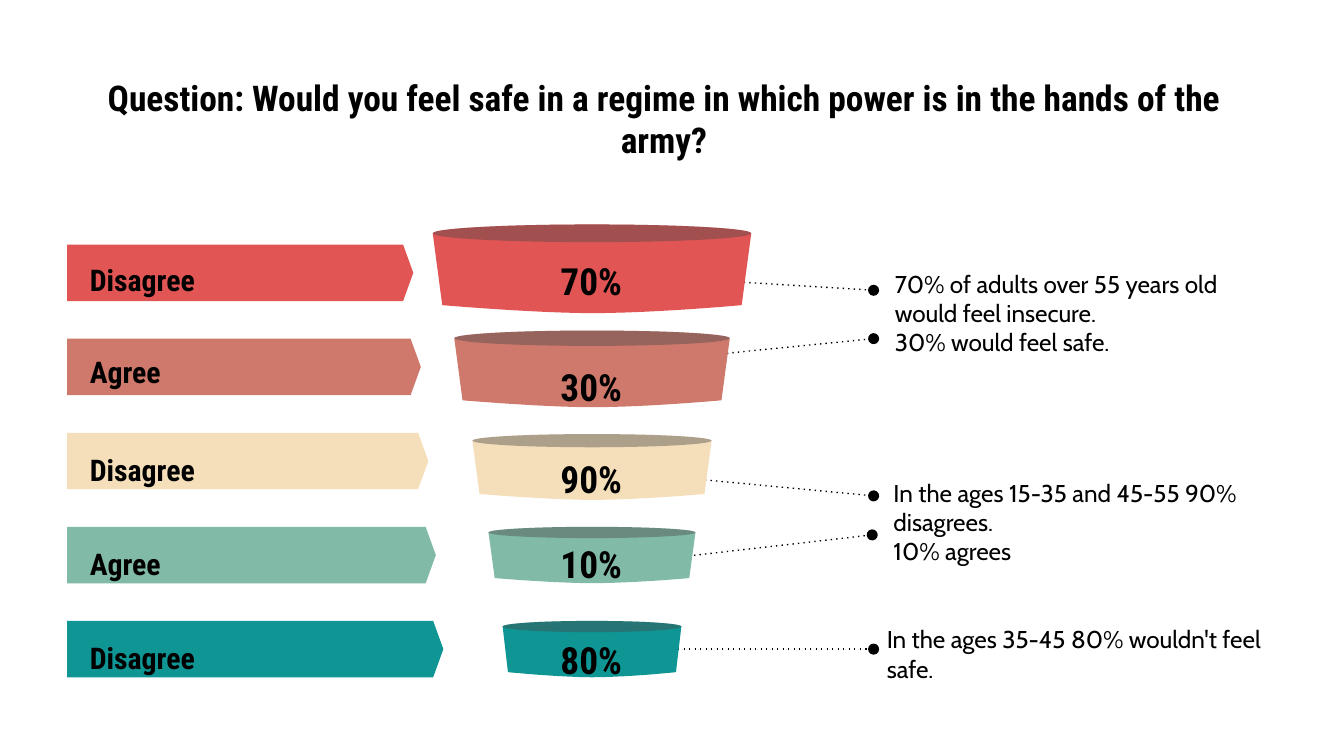
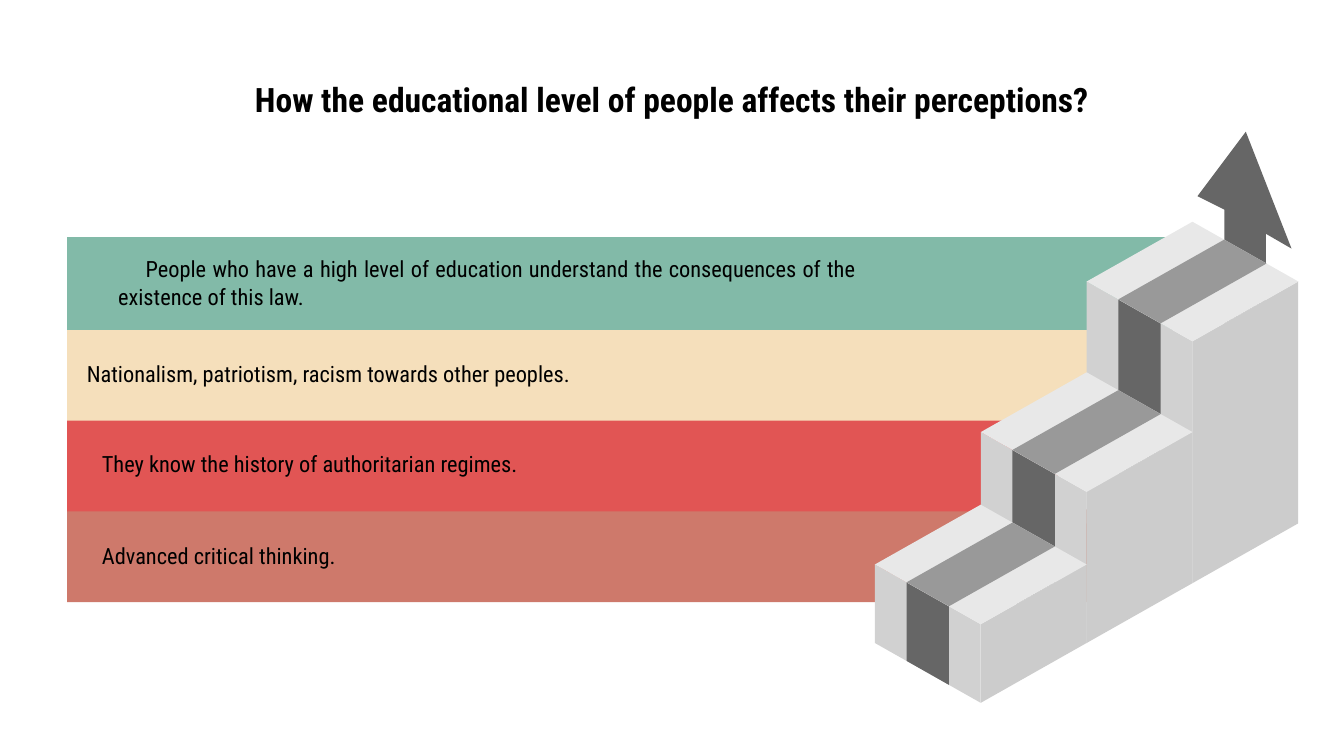
from lxml import etree
from pptx import Presentation
from pptx.dml.color import RGBColor
from pptx.enum import shapes, text
from pptx.oxml.ns import qn
from pptx.util import Emu, Inches, Pt

# Shared grid: a slide is 100 cells wide, and cells are square
WIDE = Inches(10)
CELL = WIDE / 100
HEAD, BODY = "Roboto Condensed", "Cabin"
RED, CLAY, SAND, SAGE, TEAL = "E15554", "CE796B", "F5DFBB", "82BAA8", "0E9594"
BLACK, SHADE = "000000", "494949"
STEEL, GREY, FRONT, SIDE, TOP = "666666", "999999", "D1D1D1", "CCCCCC", "E8E8E8"
LEFT, MID, JUST = text.PP_ALIGN.LEFT, text.PP_ALIGN.CENTER, text.PP_ALIGN.JUSTIFY
KIND = shapes.MSO_SHAPE


def cells(*nums):
    return [Emu(round(n * CELL)) for n in nums]


def hue(code):
    return RGBColor.from_string(code)


def paint(item, code, alpha=None):
    item.shadow.inherit = False
    item.fill.solid()
    item.fill.fore_color.rgb = hue(code)
    item.line.fill.background()
    if alpha:
        tint = item._element.spPr.find(".//" + qn("a:srgbClr"))
        etree.SubElement(tint, qn("a:alpha"), val=str(alpha * 1000))


def shape(host, kind, box, code, alpha=None):
    item = host.shapes.add_shape(kind, *cells(*box))
    paint(item, code, alpha)
    return item


def poly(host, points, code):
    first, *rest = [cells(*p) for p in points]
    pen = host.shapes.build_freeform(*first)
    pen.add_line_segments(rest, close=True)
    paint(pen.convert_to_shape(), code)


def write(slide, words, box, size=12, font=HEAD, bold=False, align=LEFT,
          middle=True, lead=1.0, before=0, after=0, indent=0):
    frame = slide.shapes.add_textbox(*cells(*box)).text_frame
    frame.word_wrap = True
    frame.margin_left = frame.margin_right = Inches(0.1)
    frame.margin_top = frame.margin_bottom = Inches(0.1)
    frame.vertical_anchor = text.MSO_ANCHOR.MIDDLE if middle else text.MSO_ANCHOR.TOP
    for n, line in enumerate(words.split("\n")):
        para = frame.add_paragraph() if n else frame.paragraphs[0]
        para.alignment, para.line_spacing = align, lead
        para.space_before, para.space_after = Pt(before), Pt(after)
        if indent:
            para._p.get_or_add_pPr().set("indent", str(cells(indent)[0]))
        run = para.add_run()
        run.text = line
        run.font.name, run.font.size, run.font.bold = font, Pt(size), bold
        run.font.color.rgb = hue(BLACK)


def title(slide, words, box, **form):
    write(slide, words, box, bold=True, align=MID, **form)


def leader(slide, start, end):
    line = slide.shapes.add_connector(
        shapes.MSO_CONNECTOR.STRAIGHT, *cells(*start, *end))
    line.line.color.rgb = hue(BLACK)
    line.line.width = Pt(0.75)
    props = line._element.spPr
    stroke = props.find(qn("a:ln"))
    etree.SubElement(stroke, qn("a:prstDash"), val="dot")
    etree.SubElement(stroke, qn("a:tailEnd"), type="oval")
    etree.SubElement(props, qn("a:effectLst"))


# Funnel slide
def curve(a, b, c, d, steps=12):
    """Points of a cubic curve from a to d."""
    for n in range(steps + 1):
        t = n / steps
        s = 1 - t
        yield tuple(s**3 * i + 3 * s * s * t * j + 3 * s * t * t * k + t**3 * m
                    for i, j, k, m in zip(a, b, c, d))


def cup(slide, box, code):
    x, y, w, h = box
    group = slide.shapes.add_group_shape()
    left, right, base = (0.03, 0.91), (0.97, 0.91), (0.5, 1)
    edge = [(0, 0.1), *curve(left, left, (0.32, 1), base),
            *curve(base, (0.7, 1), right, right), (1, 0.1)]
    poly(group, [(x + w * i, y + h * j) for i, j in edge], code)
    rim = (x, y, w, h * 0.2)
    shape(group, KIND.OVAL, rim, code)
    shape(group, KIND.OVAL, rim, SHADE, alpha=42)


def tag(slide, box, code):
    item = shape(slide, KIND.PENTAGON, box, code)
    item.adjustments[0] = 0.18


def funnel(slide):
    title(slide, "Question: Would you feel safe in a regime in which power "
          "is in the hands of the army?", (4.4, 4.5, 90, 8.6), size=19)

    # Leaders and notes
    for start, end in [((43.9, 20.3), (65, 21.6)), ((43.9, 27.3), (65, 25.2)),
                       ((49.2, 35.4), (65, 36.9)), ((49.2, 41.6), (64.9, 39.8)),
                       ((43.9, 48.3), (65, 48.3))]:
        leader(slide, start, end)
    for words, box, middle in [
            ("70% of adults over 55 years old would feel insecure.\n"
             "30% would feel safe.", (65.6, 19, 28.8, 12.4), False),
            ("In the ages 15-35 and 45-55 90% disagrees.\n10% agrees",
             (65.5, 34.6, 30, 7.7), False),
            ("In the ages 35-45 80% wouldn't feel safe.",
             (65, 45.5, 30, 6.3), True)]:
        write(slide, words, box, size=13, font=BODY, middle=middle)

    # Answers: label, its top, share, its top, colour, cup top, width, height
    rows = [("Disagree", 18.1, "70%", 19, RED, 16.7, 23.7, 6.6),
            ("Agree", 24.9, "30%", 26.9, CLAY, 24.6, 20.5, 5.7),
            ("Disagree", 32.2, "90%", 33.7, SAND, 32.3, 17.8, 4.9),
            ("Agree", 39.2, "10%", 40, SAGE, 39.2, 15.4, 4.2),
            ("Disagree", 46.2, "80%", 47.2, TEAL, 46.2, 13.3, 4.2)]
    axis = 44.05
    for n, (label, low, share, mark, code, top, w, h) in enumerate(rows):
        tag(slide, (5, 18.2 + 7 * n, 25.75 + 0.56 * n, 4.2), code)
        cup(slide, (axis - w / 2, top, w, h), code)
        write(slide, label, (5.7, low, 16.9, 4.2), size=16, bold=True,
              middle=False, lead=1.15, after=16)
        write(slide, share, (38.8, mark, 10.4, 3.3), size=20, bold=True,
              align=MID, lead=1.15)


# Stairs slide
def step(host, box, rise):
    """A block in slanted view; box holds its top face."""
    x, y, w, h = box

    def face(code, *corners):
        poly(host, [(x + w / 2 * (a + b), y + h / 2 * (1 + a - b) + drop * rise)
                    for a, b, drop in corners], code)

    def front(code, a, z):
        face(code, (a, 0, 0), (a, 0, 1), (z, 0, 1), (z, 0, 0))

    def lid(code, a, z):
        face(code, (a, 0, 0), (z, 0, 0), (z, 1, 0), (a, 1, 0))

    front(FRONT, 0, 1)
    front(STEEL, 0.3, 0.7)
    face(SIDE, (1, 0, 0), (1, 0, 1), (1, 1, 1), (1, 1, 0))
    lid(TOP, 0, 1)
    lid(GREY, 0.3, 0.7)


def stairs(slide, box):
    x, y, w, h = box
    group = slide.shapes.add_group_shape()
    arrow = [(27.6, 0), (24, 4.8), (26, 5.8), (26, 20.3),
             (29.1, 22.1), (29.1, 7.6), (31, 8.7)]
    poly(group, [(x + i, y + j) for i, j in arrow], STEEL)
    half, deep = w / 4, 8.9
    for n, top in enumerate((6.7, 17.9, 27.75)):
        foot = h - deep - (2 - n) * deep / 2
        step(group, (x + (2 - n) * half, y + top, 2 * half, deep),
             foot - top)


def climb(slide):
    bands = [(SAGE, 84.2), (SAND, 79.4), (RED, 73.8), (CLAY, 79.4)]
    for n, (code, w) in reversed(list(enumerate(bands))):
        shape(slide, KIND.RECTANGLE, (5, 17.65 + 6.75 * n, w, 6.9), code)
    title(slide, "How the educational level of people affects their perceptions?",
          (5, 4.5, 90, 5.3), size=18, lead=1.15, before=12, after=12)
    stairs(slide, (65.1, 9.8, 31.5, 42.5))

    # Band texts
    write(slide, "People who have a high level of education understand the "
          "consequences of the existence of this law.", (7.8, 18.4, 56.9, 5.2),
          align=JUST, lead=1.04, before=12, after=12, indent=2.05)
    write(slide, "Νationalism, patriotism, racism towards other peoples.",
          (3.7, 25.2, 41.5, 5.2), align=MID)
    for words, top in [("They know the history of authoritarian regimes.", 31.9),
                       ("Advanced critical thinking.", 38.7)]:
        write(slide, words, (6.6, top, 50.7, 5.2))


def main():
    deck = Presentation()
    deck.slide_width, deck.slide_height = WIDE, Emu(WIDE * 9 // 16)
    for build in (funnel, climb):
        build(deck.slides.add_slide(deck.slide_layouts[6]))
    deck.save("out.pptx")


if __name__ == "__main__":
    main()
